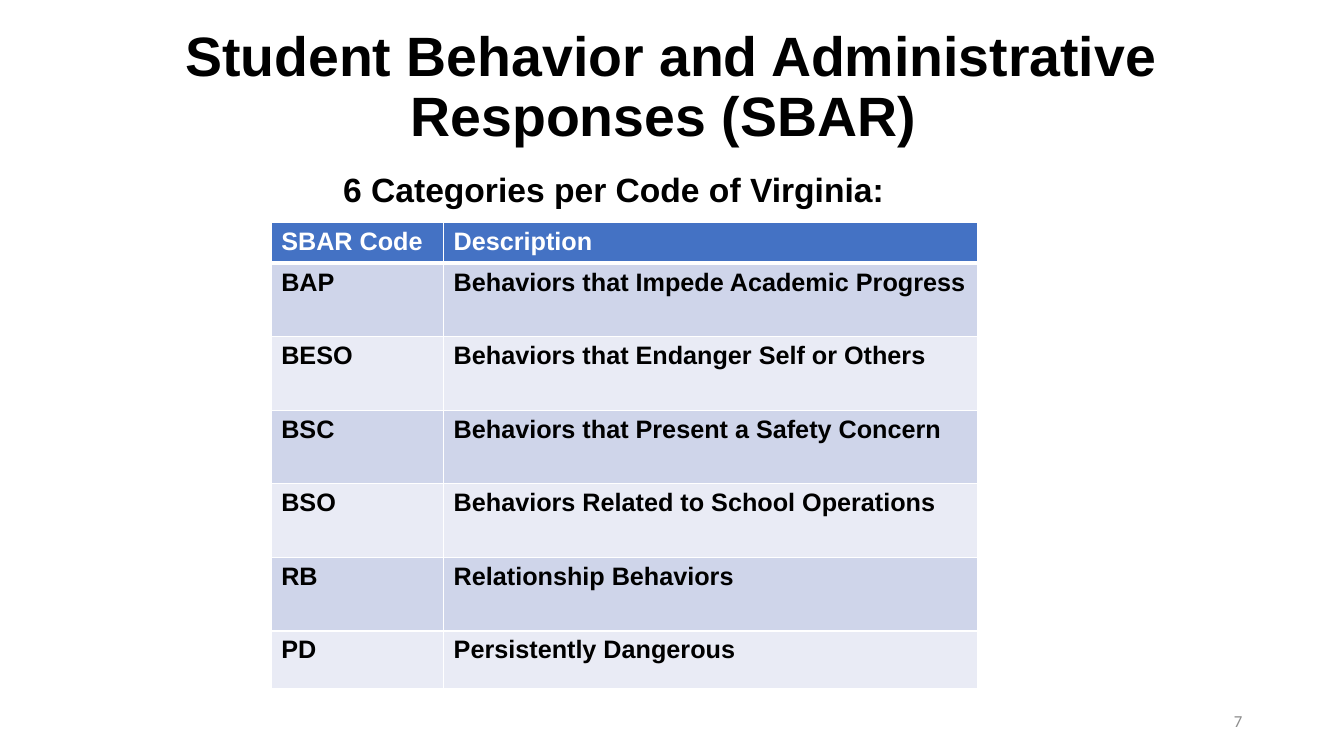
from lxml.etree import SubElement
from pptx import Presentation
from pptx.dml.color import RGBColor
from pptx.enum.text import MSO_ANCHOR, MSO_AUTO_SIZE, PP_ALIGN
from pptx.oxml.ns import qn
from pptx.util import Inches, Pt

BLACK = RGBColor(0x00, 0x00, 0x00)
WHITE = RGBColor(0xFF, 0xFF, 0xFF)
GREY = RGBColor(0x8C, 0x8C, 0x8C)
HEADER_BLUE = RGBColor(0x44, 0x72, 0xC4)
BANDS = (RGBColor(0xCF, 0xD5, 0xEA), RGBColor(0xE9, 0xEB, 0xF5))

CATEGORIES = [
    ("SBAR Code", "Description"),
    ("BAP", "Behaviors that Impede Academic Progress"),
    ("BESO", "Behaviors that Endanger Self or Others"),
    ("BSC", "Behaviors that Present a Safety Concern"),
    ("BSO", "Behaviors Related to School Operations"),
    ("RB", "Relationship Behaviors"),
    ("PD", "Persistently Dangerous"),
]
COLUMN_WIDTHS = (1.71, 5.3)
ROW_HEIGHTS = (0.37, *[0.73] * 5, 0.57)


def add_text(frame, text, size, color, bold=True, font="Arial", align=PP_ALIGN.LEFT):
    """Fill the frame's first paragraph with one formatted run."""
    paragraph = frame.paragraphs[0]
    paragraph.alignment = align
    run = paragraph.add_run()
    run.text = text
    run.font.name = font
    run.font.size = Pt(size)
    run.font.bold = bold
    run.font.color.rgb = color
    return paragraph


def place_title(slide, left, top, width, height):
    title = slide.shapes.title
    title.left, title.top = Inches(left), Inches(top)
    title.width, title.height = Inches(width), Inches(height)
    frame = title.text_frame
    frame.word_wrap = True
    frame.auto_size = MSO_AUTO_SIZE.NONE
    frame.vertical_anchor = MSO_ANCHOR.BOTTOM
    heading = add_text(frame, "Student Behavior and Administrative Responses (SBAR) ",
                       39.6, BLACK, align=PP_ALIGN.CENTER)
    heading.line_spacing = 0.9


def add_box(slide, left, top, width, height):
    box = slide.shapes.add_textbox(Inches(left), Inches(top), Inches(width), Inches(height))
    box.text_frame.word_wrap = True
    return box.text_frame


def add_subtitle(slide, *box):
    subtitle = add_text(add_box(slide, *box), "6 Categories per Code of Virginia:",
                        24, BLACK, align=PP_ALIGN.CENTER)
    subtitle.line_spacing = 0.9


def add_page_number(slide, *box):
    frame = add_box(slide, *box)
    frame.vertical_anchor = MSO_ANCHOR.MIDDLE
    add_text(frame, "7", 12, GREY, bold=False, font="Calibri", align=PP_ALIGN.RIGHT)


def set_borders(cell, top, bottom):
    """Draw white cell borders, with top and bottom widths in points."""
    properties = cell._tc.get_or_add_tcPr()
    for side, width in (("L", 1), ("R", 1), ("T", top), ("B", bottom)):
        line = SubElement(properties, qn(f"a:ln{side}"), w=str(Pt(width)))
        SubElement(SubElement(line, qn("a:solidFill")), qn("a:srgbClr"), val=str(WHITE))


def add_category_table(slide, left, top):
    table = slide.shapes.add_table(
        len(CATEGORIES), len(COLUMN_WIDTHS), Inches(left), Inches(top),
        Inches(sum(COLUMN_WIDTHS)), Inches(sum(ROW_HEIGHTS))).table
    for column, width in zip(table.columns, COLUMN_WIDTHS):
        column.width = Inches(width)
    for row_index, (entries, height) in enumerate(zip(CATEGORIES, ROW_HEIGHTS)):
        table.rows[row_index].height = Inches(height)
        header = row_index == 0
        for column_index, entry in enumerate(entries):
            cell = table.cell(row_index, column_index)
            set_borders(cell, top=3 if row_index == 1 else 1, bottom=3 if header else 1)
            cell.fill.solid()
            cell.fill.fore_color.rgb = HEADER_BLUE if header else BANDS[(row_index - 1) % 2]
            add_text(cell.text_frame, entry, 18, WHITE if header else BLACK)


def main():
    presentation = Presentation()
    presentation.slide_width = Inches(13.33)
    presentation.slide_height = Inches(7.5)
    slide = presentation.slides.add_slide(presentation.slide_layouts.get_by_name("Title Only"))
    add_subtitle(slide, 0.79, 1.67, 10.59, 5.28)
    place_title(slide, 0.79, 0.67, 11.73, 0.85)
    add_page_number(slide, 9.42, 6.95, 3, 0.4)
    add_category_table(slide, 2.69, 2.21)
    presentation.save("out.pptx")


if __name__ == "__main__":
    main()
